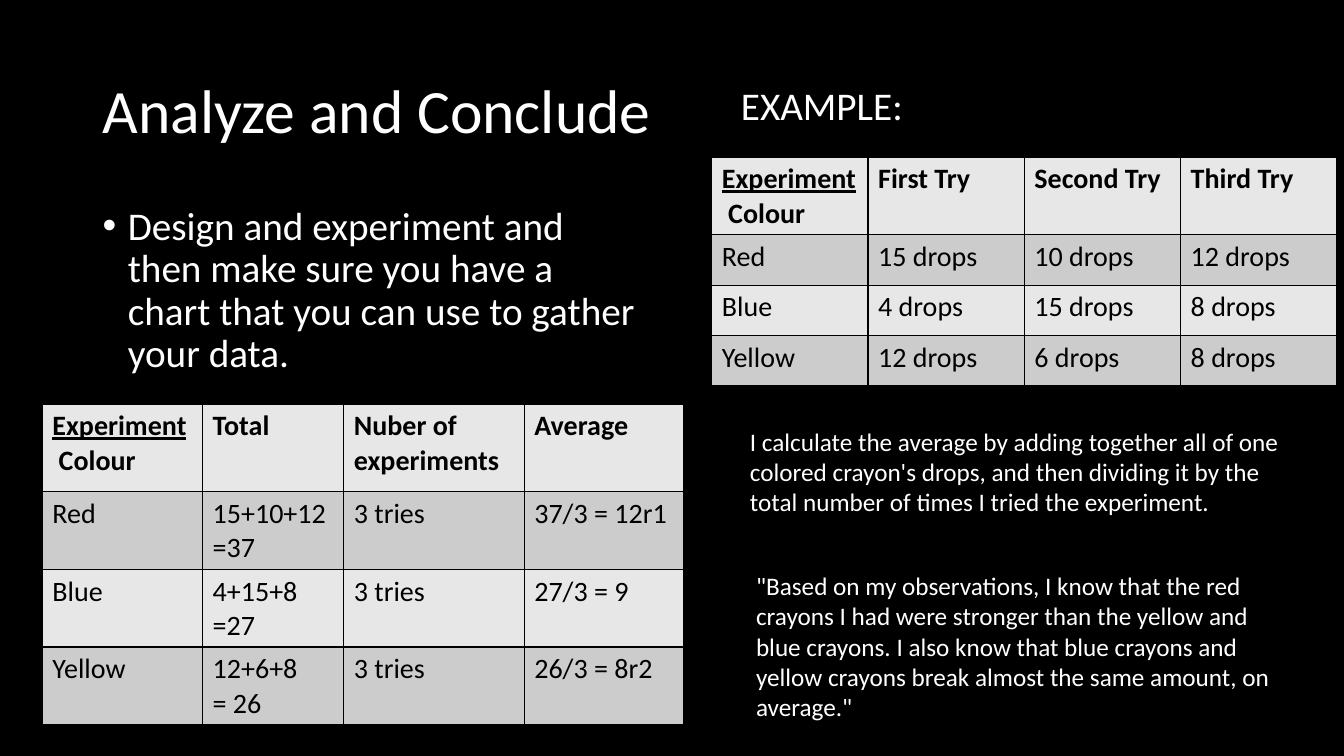
import pptx
import pptx.dml.color
import pptx.enum.text
import pptx.oxml
import pptx.oxml.ns
import pptx.util
import lxml.etree

Inches = pptx.util.Inches
Pt = pptx.util.Pt

THEME = {
    "font": "Calibri",
    "background": "000000",
    "text": "FFFFFF",
    "table_text": "000000",
    "border": "000000",
    "bands": ("E7E7E7", "CCCCCC"),
    "title": 44,
    "body": 28,
    "table": 20,
    "note": 18,
}

CORNER = "Experiment\n Colour"

TEXTS = [
    {"text": "Analyze and Conclude", "at": (0.92, 0.4, 11.5, 1.45),
     "size": "title", "spacing": 0.9, "middle": True},
    {"text": "Design and experiment and then make sure you have a chart that you can use to gather your data.",
     "at": (0.92, 2, 5.54, 3.99), "size": "body", "spacing": 0.9, "before": 10, "bullet": True},
    {"text": "EXAMPLE:", "at": (7.25, 0.81, 5.02, 0.54),
     "size": "body", "spacing": 0.9, "before": 10},
    {"text": "I calculate the average by adding together all of one colored crayon's drops, "
             "and then dividing it by the total number of times I tried the experiment.",
     "at": (7.34, 4.18, 5.44, 1.62), "size": "note"},
    {"text": "\"Based on my observations, I know that the red crayons I had were stronger than "
             "the yellow and blue crayons. I also know that blue crayons and yellow crayons "
             "break almost the same amount, on average.\"",
     "at": (7.4, 5.61, 5.31, 1.62), "size": "note"},
]

TABLES = [
    {"at": (7.06, 1.56), "cols": [1.55] * 4, "rows": [0.77] + [0.5] * 3, "cells": [
        [CORNER, "First Try", "Second Try", "Third Try"],
        ["Red", "15 drops", "10 drops", "12 drops"],
        ["Blue", "4 drops", "15 drops", "8 drops"],
        ["Yellow", "12 drops", "6 drops", "8 drops"],
    ]},
    {"at": (0.42, 4.01), "cols": [1.59, 1.4, 1.79, 1.58], "rows": [0.87] + [0.77] * 3, "cells": [
        [CORNER, "Total", "Nuber of experiments", "Average"],
        ["Red", "15+10+12=37", "3 tries", "37/3 = 12r1"],
        ["Blue", "4+15+8 =27", "3 tries", "27/3 = 9"],
        ["Yellow", "12+6+8\n= 26", "3 tries", "26/3 = 8r2"],
    ]},
]


def rgb(name):
    return pptx.dml.color.RGBColor.from_string(name)


def format_runs(p, size, color, bold=False):
    for r in p.runs:
        r.font.name = THEME["font"]
        r.font.size = Pt(THEME[size])
        r.font.color.rgb = rgb(THEME[color])
        r.font.bold = bold


def add_bullet(p):
    pPr = p._p.get_or_add_pPr()
    pPr.set("marL", str(Inches(0.25)))
    pPr.set("indent", str(-Inches(0.25)))
    qn = pptx.oxml.ns.qn
    lxml.etree.SubElement(pPr, qn("a:buFont")).set("typeface", "Arial")
    lxml.etree.SubElement(pPr, qn("a:buChar")).set("char", "•")


def add_text(slide, item):
    tf = slide.shapes.add_textbox(*map(Inches, item["at"])).text_frame
    tf.word_wrap = True
    if item.get("middle"):
        tf.vertical_anchor = pptx.enum.text.MSO_ANCHOR.MIDDLE
    tf.text = item["text"]
    p = tf.paragraphs[0]
    p.line_spacing = item.get("spacing", 1.0)
    p.space_before = Pt(item.get("before", 0))
    if item.get("bullet"):
        add_bullet(p)
    format_runs(p, item["size"], "text")


def add_borders(cell):
    tcPr = cell._tc.get_or_add_tcPr()
    for side in ("lnL", "lnR", "lnT", "lnB"):
        tcPr.append(pptx.oxml.parse_xml(
            f'<a:{side} {pptx.oxml.ns.nsdecls("a")} w="{Pt(1)}"><a:solidFill>'
            f'<a:srgbClr val="{THEME["border"]}"/></a:solidFill></a:{side}>'))


def add_table(slide, item):
    cols, rows, cells = item["cols"], item["rows"], item["cells"]
    size = (sum(cols), sum(rows))
    table = slide.shapes.add_table(len(rows), len(cols), *map(Inches, item["at"] + size)).table
    for column, width in zip(table.columns, cols):
        column.width = Inches(width)
    for i, (row, height) in enumerate(zip(table.rows, rows)):
        row.height = Inches(height)
        for cell, text in zip(row.cells, cells[i]):
            cell.text_frame.text = text
            for p in cell.text_frame.paragraphs:
                format_runs(p, "table", "table_text", bold=i == 0)
            add_borders(cell)
            cell.fill.solid()
            cell.fill.fore_color.rgb = rgb(THEME["bands"][i % 2])
    table.cell(0, 0).text_frame.paragraphs[0].runs[0].font.underline = True


def main():
    prs = pptx.Presentation()
    prs.slide_width, prs.slide_height = Inches(13.33), Inches(7.5)
    slide = prs.slides.add_slide(prs.slide_layouts[6])
    slide.background.fill.solid()
    slide.background.fill.fore_color.rgb = rgb(THEME["background"])
    for item in TEXTS:
        add_text(slide, item)
    for item in TABLES:
        add_table(slide, item)
    prs.save("out.pptx")


if __name__ == "__main__":
    main()
